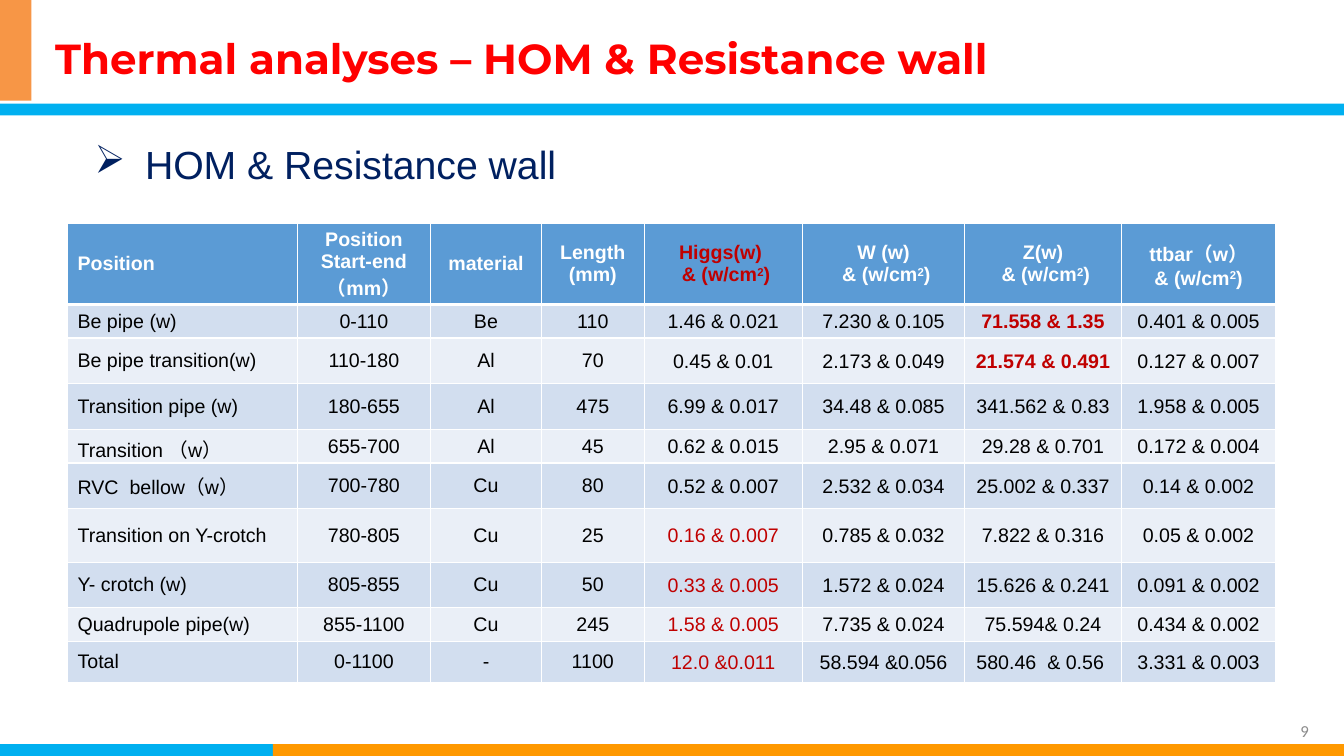
"""Builds the slide on HOM and resistance wall heat loads along the beam pipe."""
from lxml.etree import SubElement
from pptx import Presentation
from pptx.dml.color import RGBColor
from pptx.enum.shapes import MSO_SHAPE
from pptx.enum.text import MSO_ANCHOR, MSO_AUTO_SIZE, PP_ALIGN
from pptx.oxml.ns import qn
from pptx.util import Pt


def rgb(code):
    return RGBColor.from_string(code)


def style(paragraph, size, face, color, bold=False, align=PP_ALIGN.LEFT):
    paragraph.alignment = align
    paragraph.font.size = Pt(size)
    paragraph.font.name = face
    paragraph.font.bold = bold
    paragraph.font.color.rgb = rgb(color)


deck = Presentation()
deck.slide_width, deck.slide_height = Pt(960), Pt(540)
slide = deck.slides.add_slide(deck.slide_layouts[5])

bands = [
    (0, 531.5, 960, 8.5, "00B0F0"),
    (195, 531.5, 765, 8.5, "FF9900"),
    (0, 74, 960, 8.5, "00B0F0"),
    (0, 0, 22.4, 72, "F79646"),
]
for left, top, width, height, color in bands:
    band = slide.shapes.add_shape(MSO_SHAPE.RECTANGLE, Pt(left), Pt(top), Pt(width), Pt(height))
    band.shadow.inherit = False
    band.fill.solid()
    band.fill.fore_color.rgb = rgb(color)
    band.line.fill.background()

title = slide.shapes.title
title.left, title.top, title.width, title.height = Pt(32.2), Pt(19.4), Pt(856), Pt(44)
title.text_frame.text = "Thermal analyses – HOM & Resistance wall"
title.text_frame.vertical_anchor = MSO_ANCHOR.TOP
title.text_frame.auto_size = MSO_AUTO_SIZE.NONE
style(title.text_frame.paragraphs[0], 30, "Montserrat", "FF0000", True)

topic = slide.shapes.add_textbox(Pt(60.5), Pt(88.6), Pt(708), Pt(61)).text_frame
topic.word_wrap = True
topic.vertical_anchor = MSO_ANCHOR.MIDDLE
topic.text = "HOM & Resistance wall"
topic_line = topic.paragraphs[0]
style(topic_line, 28, "Arial", "002060")
topic_line.line_spacing = 0.9
topic_format = topic_line._p.get_or_add_pPr()
topic_format.set("marL", str(Pt(36)))
topic_format.set("indent", str(Pt(-36)))
bullet = topic_format.makeelement(qn("a:buChar"), {"char": "➢"})
topic_format.find(qn("a:defRPr")).addprevious(bullet)

loads = [
    ["Position", "Position\nStart-end（mm）", "material", "Length\n(mm)",
     "Higgs(w) \n & (w/cm^2^)", "W (w)\n & (w/cm^2^)", "Z(w)\n & (w/cm^2^)",
     "ttbar（w）\n& (w/cm^2^)"],
    ["Be pipe (w)", "0-110", "Be", "110",
     "1.46 & 0.021", "7.230 & 0.105", "71.558 & 1.35", "0.401 & 0.005"],
    ["Be pipe transition(w)", "110-180", "Al", "70",
     "0.45 & 0.01", "2.173 & 0.049", "21.574 & 0.491", "0.127 & 0.007"],
    ["Transition pipe (w)", "180-655", "Al", "475",
     "6.99 & 0.017", "34.48 & 0.085", "341.562 & 0.83", "1.958 & 0.005"],
    ["Transition （w）", "655-700", "Al", "45",
     "0.62 & 0.015", "2.95 & 0.071", "29.28 & 0.701", "0.172 & 0.004"],
    ["RVC  bellow（w）", "700-780", "Cu", "80",
     "0.52 & 0.007", "2.532 & 0.034", "25.002 & 0.337", "0.14 & 0.002"],
    ["Transition on Y-crotch", "780-805", "Cu", "25",
     "0.16 & 0.007", "0.785 & 0.032", "7.822 & 0.316", "0.05 & 0.002"],
    ["Y- crotch (w)", "805-855", "Cu", "50",
     "0.33 & 0.005", "1.572 & 0.024", "15.626 & 0.241", "0.091 & 0.002"],
    ["Quadrupole pipe(w)", "855-1100", "Cu", "245",
     "1.58 & 0.005", "7.735 & 0.024", "75.594& 0.24", "0.434 & 0.002"],
    ["Total", "0-1100", "-", "1100",
     "12.0 &0.011", "58.594 &0.056", "580.46  & 0.56 ", "3.331 & 0.003"],
]
column_widths = [164.2, 95.2, 79.2, 73.4, 113, 116, 111.8, 110.4]
row_heights = [54.7, 23, 32.6, 32.6, 23, 32.6, 38.4, 32.4, 23, 29.2]
higgs, z_pole = 4, 6
bold_red = {(1, z_pole), (2, z_pole), (0, higgs)}
red = bold_red | {(row, higgs) for row in range(6, 10)}

load_table = slide.shapes.add_table(
    len(loads), len(column_widths), Pt(48.2), Pt(159.8),
    Pt(sum(column_widths)), Pt(sum(row_heights))).table
for column, width in zip(load_table.columns, column_widths):
    column.width = Pt(width)
for row, height in zip(load_table.rows, row_heights):
    row.height = Pt(height)

for r, entries in enumerate(loads):
    for c, entry in enumerate(entries):
        cell = load_table.cell(r, c)
        cell.vertical_anchor = MSO_ANCHOR.MIDDLE
        if r and c >= higgs:
            cell.margin_left = cell.margin_right = cell.margin_top = Pt(0.7)
            cell.margin_bottom = Pt(0)
        for side in ("L", "R", "T", "B"):
            thick = (r, side) in {(0, "B"), (1, "T")}
            border = SubElement(cell._tc.get_or_add_tcPr(), qn(f"a:ln{side}"),
                                w=str(Pt(3 if thick else 1)))
            border_fill = SubElement(border, qn("a:solidFill"))
            SubElement(border_fill, qn("a:srgbClr"), val="FFFFFF")
        cell.fill.solid()
        cell.fill.fore_color.rgb = rgb("5B9BD5" if r == 0 else "D2DEEF" if r % 2 else "EAEFF7")
        color = "C00000" if (r, c) in red else "000000" if r else "FFFFFF"
        for i, line in enumerate(entry.split("\n")):
            frame = cell.text_frame
            paragraph = frame.add_paragraph() if i else frame.paragraphs[0]
            style(paragraph, 14, "Arial", color, r == 0 or (r, c) in bold_red,
                  PP_ALIGN.CENTER if c else PP_ALIGN.LEFT)
            for k, part in enumerate(line.split("^")):
                run = paragraph.add_run()
                run.text = part
                if k == 1:
                    run._r.get_or_add_rPr().set("baseline", "30000")

page_number = slide.shapes.add_textbox(Pt(718), Pt(507.6), Pt(224), Pt(28.8)).text_frame
page_number.word_wrap = True
page_number.vertical_anchor = MSO_ANCHOR.MIDDLE
page_number.text = "9"
style(page_number.paragraphs[0], 12, "Calibri", "8C8C8C", align=PP_ALIGN.RIGHT)

deck.save("out.pptx")
